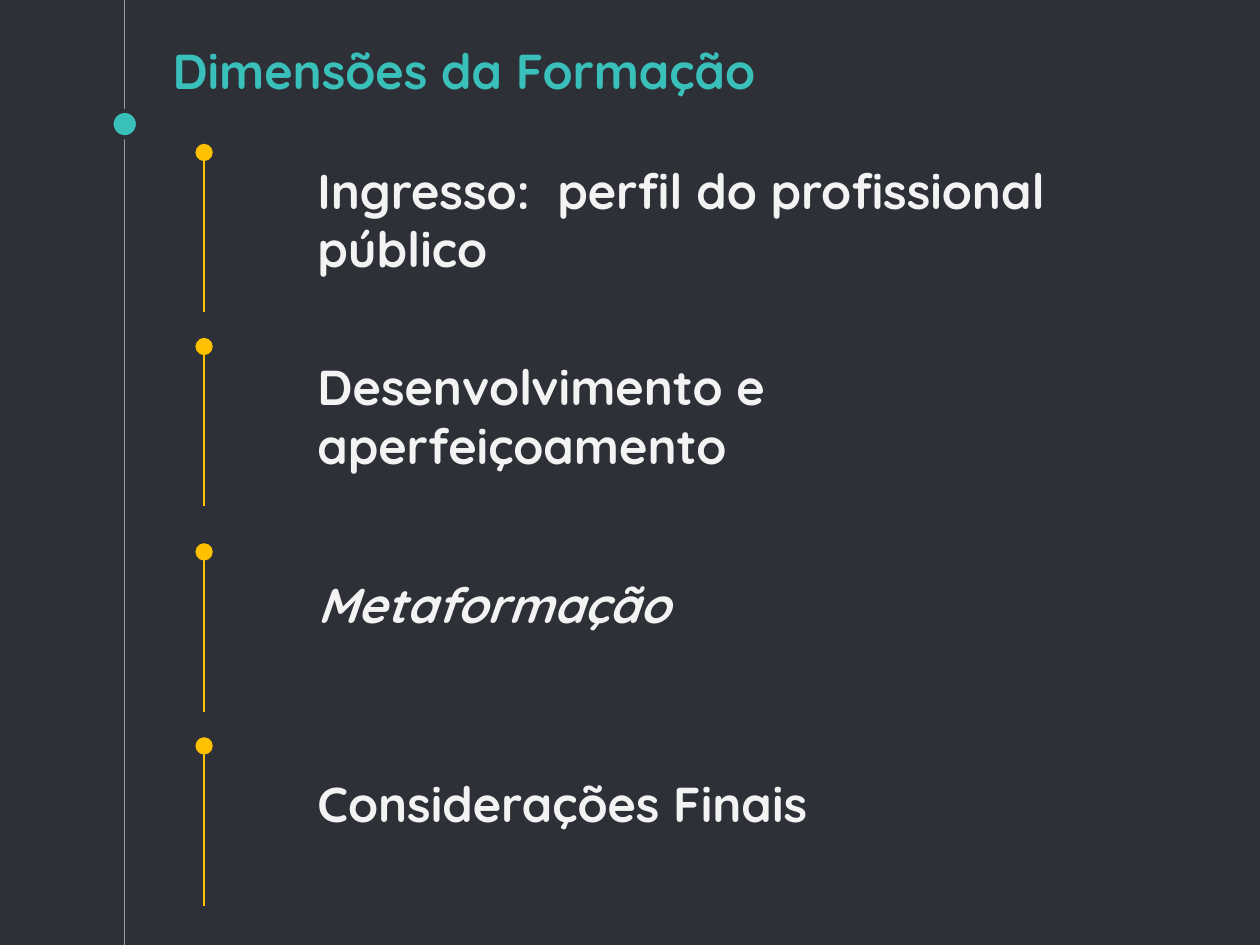
from dataclasses import dataclass

from lxml import etree
from pptx import Presentation
from pptx.dml.color import RGBColor
from pptx.enum import shapes, text
from pptx.oxml import ns
from pptx.util import Inches, Pt

DARK = RGBColor(0x2E, 0x30, 0x37)
GREY = RGBColor(0x99, 0x9F, 0xA9)
TEAL = RGBColor(0x39, 0xC0, 0xBA)
AMBER = RGBColor(0xFF, 0xC0, 0x00)
WHITE = RGBColor(0xF3, 0xF3, 0xF3)

FONT = "Quicksand"
SPINE_X = 0.99
MARKER_X = 1.62
MARKER_LENGTH = 1.27
TOPIC_X = 2.42


@dataclass
class Topic:
    label: str
    marker_top: float
    text_top: float
    width: float = 6.91
    italic: bool = False


TOPICS = [
    Topic("Ingresso:  perfil do profissional público", 1.21, 1.17),
    Topic("Desenvolvimento e aperfeiçoamento", 2.75, 2.73),
    Topic("Metaformação", 4.38, 4.46, width=4.15, italic=True),
    Topic("Considerações Finais", 5.92, 6.04),
]


def write_text(box, content: str, *, color: RGBColor, italic: bool = False,
               anchor=text.MSO_ANCHOR.TOP) -> None:
    frame = box.text_frame
    frame.word_wrap = True
    frame.auto_size = text.MSO_AUTO_SIZE.NONE
    frame.vertical_anchor = anchor
    frame.margin_left = frame.margin_right = Inches(0.1)
    frame.margin_top = frame.margin_bottom = Inches(0.1)
    para = frame.paragraphs[0]
    para.alignment = text.PP_ALIGN.LEFT
    span = para.add_run()
    span.text = content
    span.font.name = FONT
    span.font.size = Pt(28)
    span.font.bold = True
    span.font.italic = italic
    span.font.color.rgb = color


def add_vertical_line(page, x: float, start: float, end: float,
                      color: RGBColor, dot_at_end: bool = False) -> None:
    line = page.shapes.add_connector(shapes.MSO_CONNECTOR.STRAIGHT, Inches(x),
                                     Inches(start), Inches(x), Inches(end))
    line.line.color.rgb = color
    line.line.width = Pt(0.75)
    if dot_at_end:
        etree.SubElement(line.line._get_or_add_ln(), ns.qn("a:tailEnd"),
                         type="oval", w="lg", len="lg")
    etree.SubElement(line._element.spPr, ns.qn("a:effectLst"))


def add_spine(page) -> None:
    add_vertical_line(page, SPINE_X, 0, 7.5, GREY)
    size = 0.21
    dot = page.shapes.add_shape(shapes.MSO_SHAPE.OVAL, Inches(SPINE_X - size / 2),
                                Inches(0.88), Inches(size), Inches(size))
    dot.shadow.inherit = False
    dot.fill.solid()
    dot.fill.fore_color.rgb = TEAL
    dot.line.color.rgb = DARK
    dot.line.width = Pt(2.25)


def add_topic(page, topic: Topic) -> None:
    add_vertical_line(page, MARKER_X, topic.marker_top + MARKER_LENGTH,
                      topic.marker_top, AMBER, dot_at_end=True)
    box = page.shapes.add_textbox(Inches(TOPIC_X), Inches(topic.text_top),
                                  Inches(topic.width), Inches(0.42))
    write_text(box, topic.label, color=WHITE, italic=topic.italic)


def main() -> None:
    deck = Presentation()
    deck.slide_width, deck.slide_height = Inches(10), Inches(7.5)
    page = deck.slides.add_slide(deck.slide_layouts[5])
    page.background.fill.solid()
    page.background.fill.fore_color.rgb = DARK

    # Timeline spine with its teal dot
    add_spine(page)

    # Title
    title = page.shapes.title
    title.left, title.top = Inches(1.27), Inches(0.39)
    title.width, title.height = Inches(7.5), Inches(0.5)
    write_text(title, "Dimensões da Formação", color=TEAL,
               anchor=text.MSO_ANCHOR.BOTTOM)

    # Topics with their amber markers
    for topic in TOPICS:
        add_topic(page, topic)

    deck.save("out.pptx")


if __name__ == "__main__":
    main()
